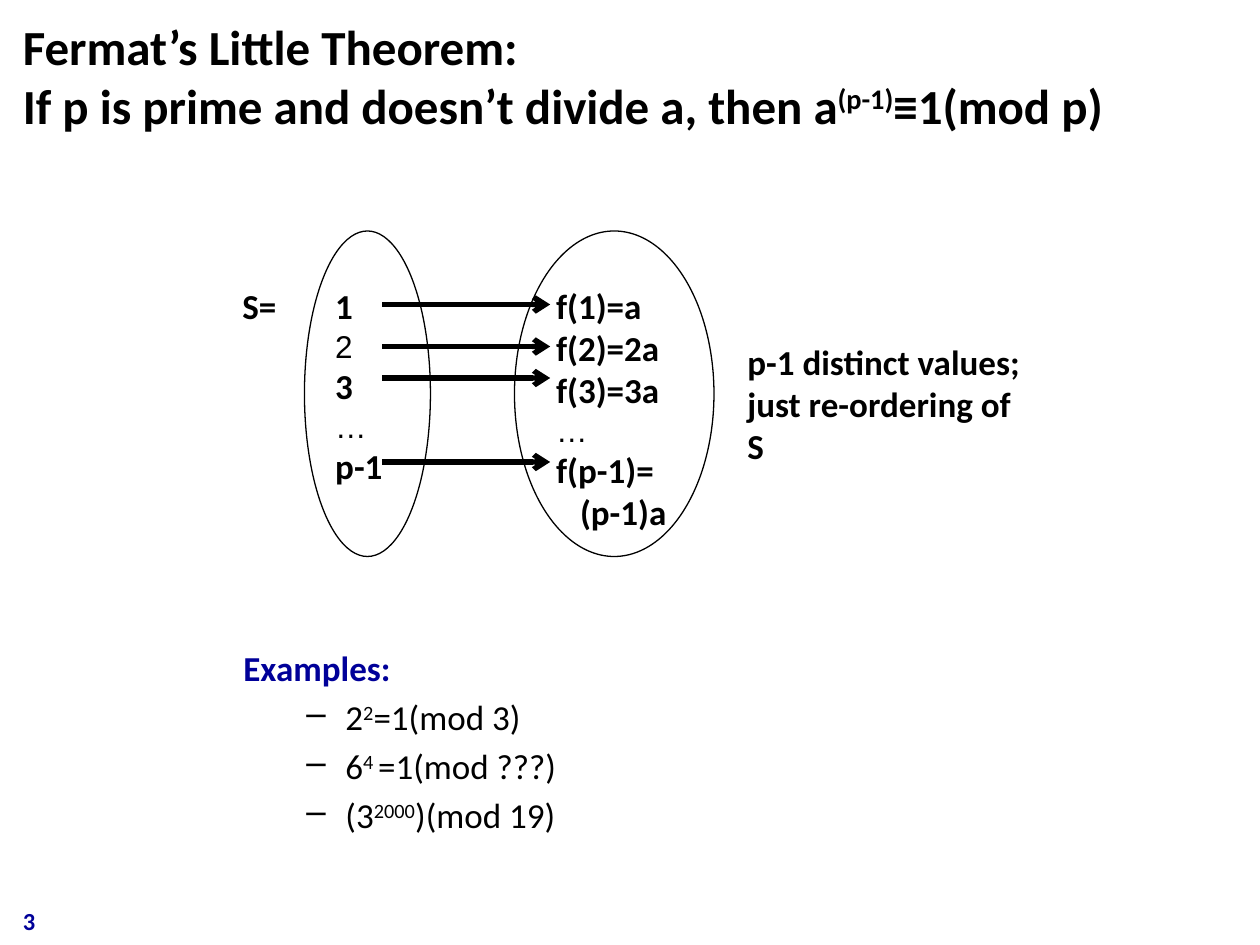
from lxml import etree
from pptx import Presentation
from pptx import util as u
from pptx.dml.color import RGBColor
from pptx.enum import shapes, text
from pptx.oxml.ns import qn

COLUMNS, ROWS = 120, 90
BLACK, WHITE, NAVY = "000000", "FFFFFF", "000099"

STRONG = dict(name="Calibri", size=u.Pt(20), bold=True)
TITLE = STRONG | dict(size=u.Pt(28))
PLAIN = STRONG | dict(bold=False)
ARIAL = dict(name="Arial", size=u.Pt(18), bold=False)
NUMBER = STRONG | dict(size=u.Pt(14))


def rgb(value):
    return RGBColor.from_string(value)


class Board:
    """Draws on one slide; places are (column, row, columns, rows) of the grid."""

    def __init__(self, deck):
        self.slide = deck.slides.add_slide(deck.slide_layouts[6])
        self.cell_width = deck.slide_width / COLUMNS
        self.cell_height = deck.slide_height / ROWS

    def place(self, column, row, *rest):
        lengths = [column * self.cell_width, row * self.cell_height]
        if rest:
            lengths += [rest[0] * self.cell_width, rest[1] * self.cell_height]
        return [u.Emu(round(length)) for length in lengths]

    def set_lines(self, frame, lines, color=BLACK, wrap=True):
        """Each line is (words, format[, layout]); words between ^ marks are raised."""
        frame.word_wrap = wrap
        frame.vertical_anchor = text.MSO_ANCHOR.TOP
        for index, (words, style, *layout) in enumerate(lines):
            paragraph = frame.paragraphs[0] if index == 0 else frame.add_paragraph()
            paragraph.alignment = text.PP_ALIGN.LEFT
            options = layout[0] if layout else {}
            properties = paragraph._p.get_or_add_pPr()
            if "before" in options:
                paragraph.space_before = options["before"]
            if "margin" in options:
                properties.set("marL", str(options["margin"]))
                properties.set("indent", str(options.get("hanging", 0)))
            if "bullet" in options:
                etree.SubElement(properties, qn("a:buChar"), char=options["bullet"])
            for part, piece in enumerate(words.split("^")):
                run = paragraph.add_run()
                run.text = piece
                for key, value in style.items():
                    setattr(run.font, key, value)
                run.font.color.rgb = rgb(options.get("color", color))
                if part % 2:
                    run._r.get_or_add_rPr().set("baseline", "30000")

    def label(self, place, lines, **options):
        box = self.slide.shapes.add_textbox(*self.place(*place))
        self.set_lines(box.text_frame, lines, **options)

    def ellipse(self, place, lines):
        oval = self.slide.shapes.add_shape(shapes.MSO_SHAPE.OVAL, *self.place(*place))
        oval.shadow.inherit = False
        oval.fill.solid()
        oval.fill.fore_color.rgb = rgb(WHITE)
        oval.line.color.rgb = rgb(BLACK)
        oval.line.width = u.Pt(0.75)
        self.set_lines(oval.text_frame, lines)

    def arrow(self, start, end):
        connector = self.slide.shapes.add_connector(
            shapes.MSO_CONNECTOR.STRAIGHT, *self.place(*start), *self.place(*end))
        connector.line.color.rgb = rgb(BLACK)
        connector.line.width = u.Pt(3)
        properties = connector._element.spPr
        etree.SubElement(properties.find(qn("a:ln")), qn("a:tailEnd"), type="arrow")
        etree.SubElement(properties, qn("a:effectLst"))


def main():
    deck = Presentation()
    deck.slide_width, deck.slide_height = u.Inches(10), u.Inches(7.5)
    board = Board(deck)

    board.label((1, 1, 118.4, 12.5), [
        ("Fermat’s Little Theorem:", TITLE),
        ("If p is prime and doesn’t divide a, then a^(p-1)^≡1(mod p)", TITLE),
    ])

    example = dict(before=u.Pt(4), margin=u.Inches(0.81),
                   hanging=u.Inches(-0.31), bullet="–")
    examples = ["2^2^=1(mod 3)", "6^4 ^=1(mod ???)", "(3^2000^)(mod 19)"]
    board.label((22, 61, 64, 19.8),
                [("Examples:", STRONG, dict(color=NAVY))]
                + [(formula, PLAIN, example) for formula in examples])
    board.label((1, 85.7, 28, 3.4), [("3", NUMBER)], color=NAVY)

    board.ellipse((29, 22, 12, 31), [
        ("1", STRONG), ("2", ARIAL), ("3", STRONG), ("…", ARIAL), ("p-1", STRONG)])
    board.label((21.9, 26.5, 6.2, 4.8), [("S=", STRONG)], wrap=False)
    board.ellipse((49, 22, 19, 31), [
        ("f(1)=a", STRONG), ("f(2)=2a", STRONG), ("f(3)=3a", STRONG), ("…", ARIAL),
        ("f(p-1)=", STRONG), ("(p-1)a", STRONG, dict(margin=u.Inches(0.19)))])
    for row in (29, 33, 36, 44):
        board.arrow((36.4, row), (52.4, row))

    board.label((70, 31.8, 29, 8.5),
                [("p-1 distinct values; just re-ordering of S", STRONG)])

    deck.save("out.pptx")


if __name__ == "__main__":
    main()
